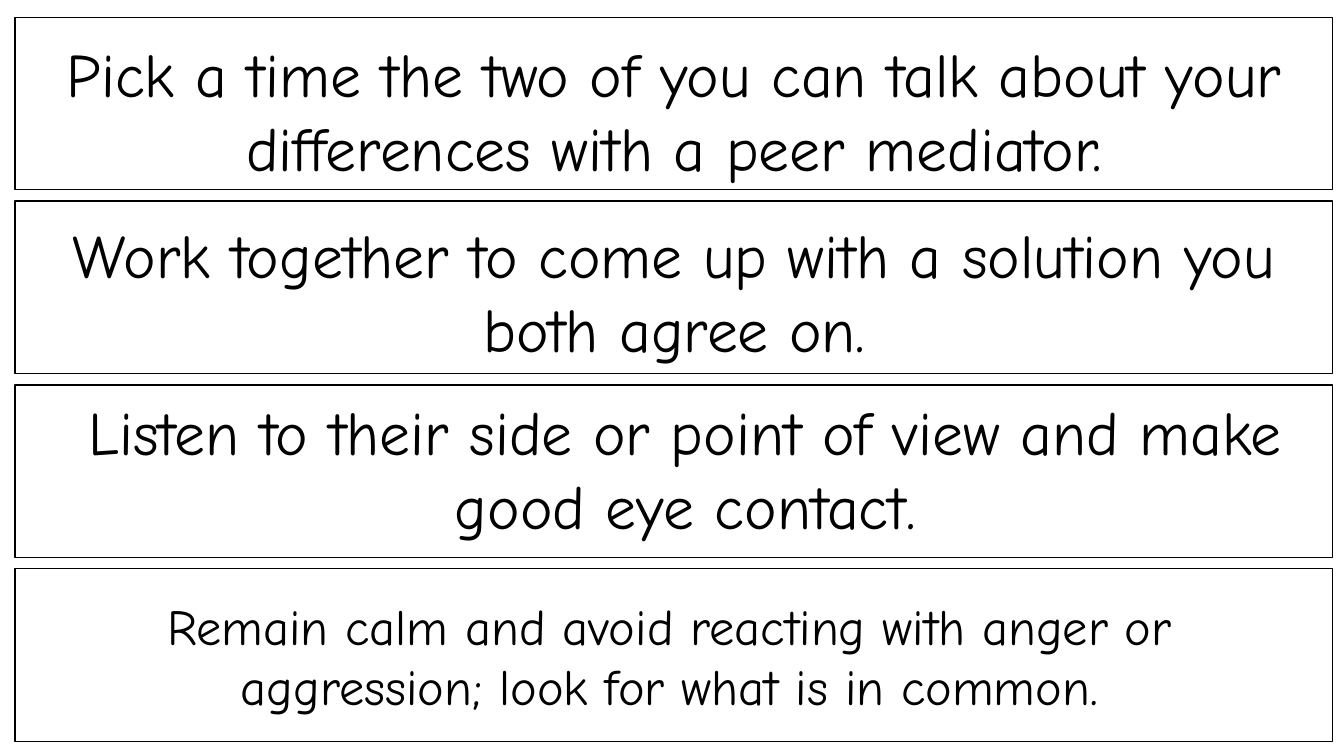
from pptx import Presentation
from pptx.dml.color import RGBColor
from pptx.enum.shapes import MSO_SHAPE as Shape
from pptx.enum.text import MSO_AUTO_SIZE as AutoSize, PP_ALIGN as Align
from pptx.util import Pt

BLACK = RGBColor(0x00, 0x00, 0x00)
WHITE = RGBColor(0xFF, 0xFF, 0xFF)

STRIP_LEFT, STRIP_TOP = 10.8, 12.4
STRIP_WIDTH, STRIP_HEIGHT = 941, 123.2
STRIP_PITCH = 131.3

ADVICE = [
    ("Pick a time the two of you can talk about your differences with a peer mediator.",
     (25.2, 22.3, 913, 113.8), 44),
    ("Work together to come up with a solution you both agree on.",
     (25.2, 151.2, 913, 113.8), 44),
    ("Listen to their side or point of view and make good eye contact.",
     (20.2, 277.9, 938.9, 113.8), 44),
    ("Remain calm and avoid reacting with anger or aggression; look for what is in common.",
     (21.6, 421.2, 913, 94.3), 36),
]


class AdviceSlide:
    """Draws outlined strips and their captions on one slide in a shared style."""

    font_name = "Comic Neue"
    line_width = 1

    def __init__(self, slide):
        self.slide = slide

    def strip(self, left, top, width, height):
        shape = self.slide.shapes.add_shape(
            Shape.RECTANGLE, Pt(left), Pt(top), Pt(width), Pt(height))
        shape.shadow.inherit = False
        shape.fill.solid()
        shape.fill.fore_color.rgb = WHITE
        shape.line.color.rgb = BLACK
        shape.line.width = Pt(self.line_width)

    def caption(self, text, box, size):
        shape = self.slide.shapes.add_textbox(*map(Pt, box))
        frame = shape.text_frame
        frame.word_wrap = True
        frame.auto_size = AutoSize.SHAPE_TO_FIT_TEXT
        paragraph = frame.paragraphs[0]
        paragraph.text = text
        paragraph.alignment = Align.CENTER
        paragraph.font.name = self.font_name
        paragraph.font.size = Pt(size)
        paragraph.font.color.rgb = BLACK


def main():
    presentation = Presentation()
    presentation.slide_width = Pt(960)
    presentation.slide_height = Pt(540)
    advice_slide = AdviceSlide(
        presentation.slides.add_slide(presentation.slide_layouts[6]))

    for row in range(len(ADVICE)):
        advice_slide.strip(STRIP_LEFT, STRIP_TOP + row * STRIP_PITCH,
                           STRIP_WIDTH, STRIP_HEIGHT)
    for text, box, size in ADVICE:
        advice_slide.caption(text, box, size)

    presentation.save("out.pptx")


if __name__ == "__main__":
    main()
